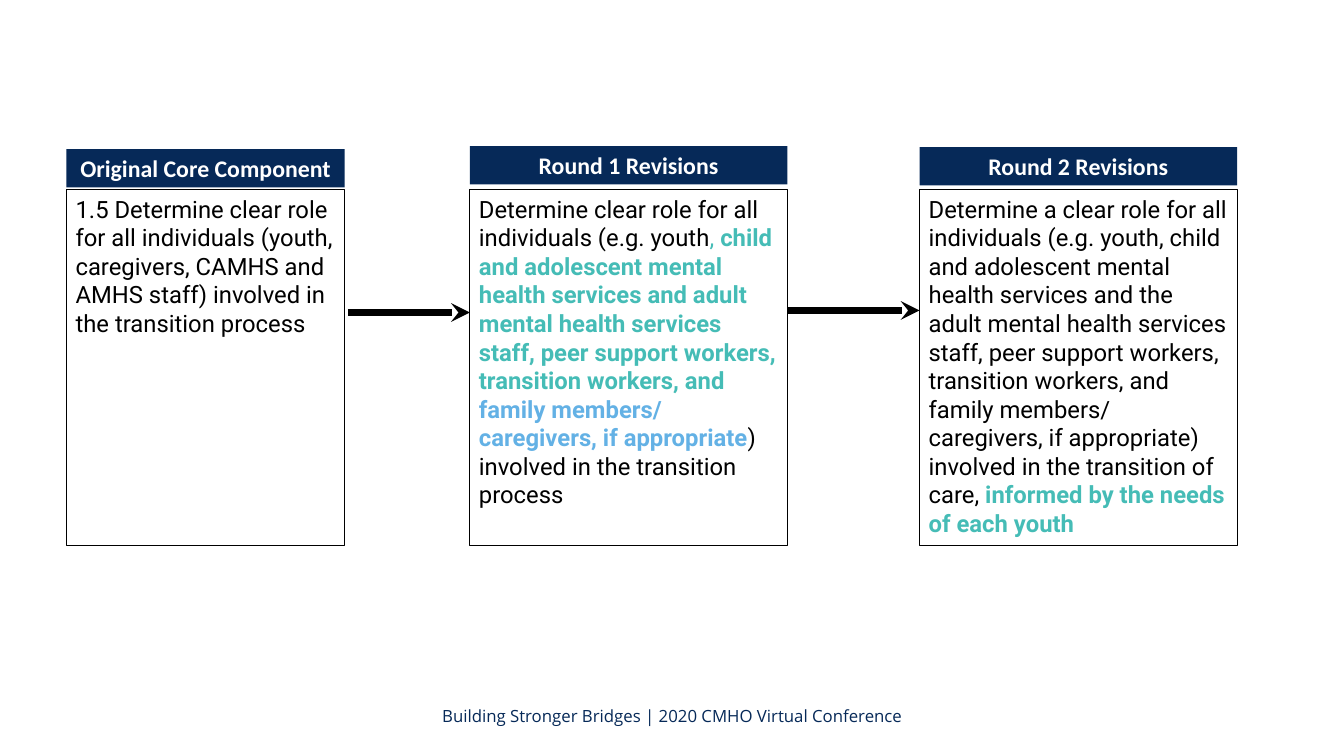
from lxml import etree
from pptx import Presentation
from pptx.dml.color import RGBColor
from pptx.enum.shapes import MSO_CONNECTOR, MSO_SHAPE
from pptx.enum.text import MSO_ANCHOR, PP_ALIGN
from pptx.oxml.ns import qn
from pptx.util import Pt

RECTANGLE = MSO_SHAPE.RECTANGLE
STRAIGHT = MSO_CONNECTOR.STRAIGHT
TOP, MIDDLE = MSO_ANCHOR.TOP, MSO_ANCHOR.MIDDLE
LEFT, CENTER = PP_ALIGN.LEFT, PP_ALIGN.CENTER

PX = 9144  # EMU, 100 px to the inch
THEME = {
    "navy": RGBColor.from_string("062958"),
    "black": RGBColor.from_string("000000"),
    "white": RGBColor.from_string("FFFFFF"),
    "teal": RGBColor.from_string("45BCB6"),
    "blue": RGBColor.from_string("63B1E5"),
    "heading": ("Calibri", Pt(17)),
    "body": ("Roboto", Pt(17)),
    "footer": ("Open Sans", Pt(12)),
    "border": Pt(0.75),
    "arrow": Pt(4.5),
}

BODY_TOP, BODY_HEIGHT, HEADING_HEIGHT = 188, 353, 38

# heading, left, width, heading top, runs of (text, colour, bold)
COLUMNS = [
    ("Original Core Component", 66, 276, 148, [
        ("1.5 Determine clear role for all individuals (youth, caregivers, "
         "CAMHS and AMHS staff) involved in the transition process", "black", False),
    ]),
    ("Round 1 Revisions", 466, 315, 145, [
        ("Determine clear role for all individuals (e.g. youth", "black", False),
        (", ", "teal", False),
        ("child and adolescent mental health services and adult mental health "
         "services staff, peer support workers, transition workers, and ", "teal", True),
        ("family members/ caregivers, if appropriate", "blue", True),
        (") involved in the transition process", "black", False),
    ]),
    ("Round 2 Revisions", 912, 315, 146, [
        ("Determine a clear role for all individuals (e.g. youth, child and "
         "adolescent mental health services and the adult mental health services "
         "staff, peer support workers, transition workers, and family members/ "
         "caregivers, if appropriate) involved in the transition of care, ", "black", False),
        ("informed by the needs of each youth", "teal", True),
    ]),
]

# start x, end x, y
ARROWS = [(345, 466, 310), (781, 912, 308)]


def write_text(shape, runs, style, alignment, anchor):
    frame = shape.text_frame
    frame.word_wrap = True
    frame.vertical_anchor = anchor
    frame.margin_left = frame.margin_right = 9 * PX
    frame.margin_top = frame.margin_bottom = 5 * PX
    paragraph = frame.paragraphs[0]
    paragraph.alignment = alignment
    for text, colour, bold in runs:
        run = paragraph.add_run()
        run.text = text
        run.font.name, run.font.size = THEME[style]
        run.font.bold = bold
        run.font.color.rgb = THEME[colour]


def add_box(left, top, width, height):
    """Add a rectangle without shadow, fill or line."""
    box = slide.shapes.add_shape(RECTANGLE, left * PX, top * PX, width * PX, height * PX)
    box.shadow.inherit = False
    box.fill.background()
    box.line.fill.background()
    return box


presentation = Presentation()
presentation.slide_width = 1333 * PX
presentation.slide_height = 750 * PX
slide = presentation.slides.add_slide(presentation.slide_layouts[6])

footer = slide.shapes.add_textbox(311 * PX, 690 * PX, 712 * PX, 40 * PX)
write_text(footer, [("Building Stronger Bridges | 2020 CMHO Virtual Conference", "navy", False)],
           "footer", CENTER, MIDDLE)

for heading, left, width, heading_top, runs in COLUMNS:
    body_box = add_box(left, BODY_TOP, width, BODY_HEIGHT)
    body_box.line.color.rgb = THEME["black"]
    body_box.line.width = THEME["border"]
    write_text(body_box, runs, "body", LEFT, TOP)

    heading_box = add_box(left, heading_top, width, HEADING_HEIGHT)
    heading_box.fill.solid()
    heading_box.fill.fore_color.rgb = THEME["navy"]
    write_text(heading_box, [(heading, "white", True)], "heading", CENTER, TOP)

for start, end, y in ARROWS:
    arrow = slide.shapes.add_connector(STRAIGHT, start * PX, y * PX, end * PX, y * PX)
    arrow.line.color.rgb = THEME["black"]
    arrow.line.width = THEME["arrow"]
    etree.SubElement(arrow.line._get_or_add_ln(), qn("a:tailEnd"), type="stealth")
    etree.SubElement(arrow._element.spPr, qn("a:effectLst"))

presentation.save("out.pptx")
